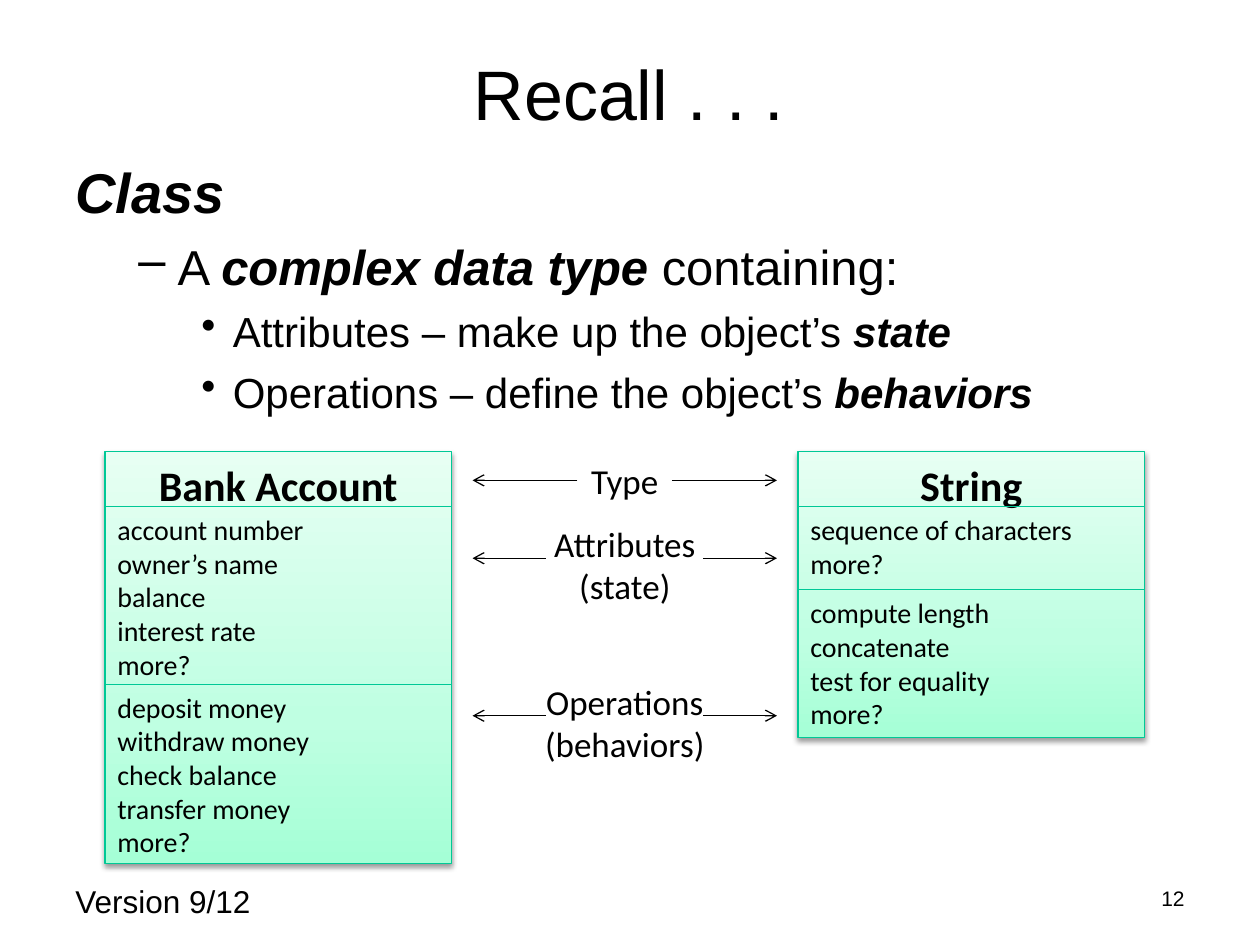
import dataclasses
from typing import NamedTuple, Optional, Sequence

import pptx
import pptx.dml.color
import pptx.enum.shapes
import pptx.enum.text
import pptx.oxml
import pptx.oxml.ns
import pptx.util
from lxml import etree

Pt = pptx.util.Pt
ALIGN = pptx.enum.text.PP_ALIGN
ANCHOR = pptx.enum.text.MSO_ANCHOR
qn = pptx.oxml.ns.qn

COLORS = {
    "text": "000000",
    "outline": "00C896",
    "deep": "A5FFD6",
    "middle": "BFFFE2",
    "pale": "E7FFF3",
}
BOX_TOP, BOX_WIDTH, HEADER_LINE = 258, 198, 289.5
ARROW_LEFT, ARROW_RIGHT = 270, 444
CENTER = (ARROW_LEFT + ARROW_RIGHT) / 2


class Frame(NamedTuple):
    left: float
    top: float
    width: float
    height: float


class Piece(NamedTuple):
    text: str
    strong: bool = False


@dataclasses.dataclass
class Line:
    pieces: Sequence[Piece]
    size: Optional[float] = None
    level: int = 0
    margin: float = 0
    hang: float = 0
    bullet: str = ""
    before: float = 0


@dataclasses.dataclass
class ClassBox:
    name: str
    left: float
    bottom: float
    operations_line: float
    attributes: Sequence[str]
    operations: Sequence[str]


@dataclasses.dataclass
class Label:
    lines: Sequence[str]
    frame: Frame
    arrow_y: float
    half_gap: float


def plain(*texts: str) -> list[Line]:
    return [Line([Piece(text)]) for text in texts]


def rgb(name: str) -> pptx.dml.color.RGBColor:
    return pptx.dml.color.RGBColor.from_string(COLORS[name])


def add_text(page, frame: Frame, lines: Sequence[Line], *, font: str = "Calibri",
             size: float = 16, bold: bool = False, align=ALIGN.LEFT,
             anchor=ANCHOR.TOP, spacing: Optional[float] = None,
             inset: bool = True) -> None:
    box = page.shapes.add_textbox(*map(Pt, frame))
    text_frame = box.text_frame
    text_frame.word_wrap = True
    text_frame.vertical_anchor = anchor
    if not inset:
        text_frame.margin_left = text_frame.margin_right = 0
        text_frame.margin_top = text_frame.margin_bottom = 0
    for index, line in enumerate(lines):
        para = text_frame.add_paragraph() if index else text_frame.paragraphs[0]
        para.alignment = align
        para.level = line.level
        para.space_before = Pt(line.before)
        if spacing:
            para.line_spacing = spacing
        if line.bullet:
            properties = para._p.get_or_add_pPr()
            properties.set("marL", str(Pt(line.margin)))
            properties.set("indent", str(Pt(-line.hang)))
            etree.SubElement(properties, qn("a:buChar")).set("char", line.bullet)
        for piece in line.pieces:
            span = para.add_run()
            span.text = piece.text
            span.font.name = font
            span.font.size = Pt(line.size or size)
            span.font.bold = bold or piece.strong
            span.font.italic = piece.strong
            span.font.color.rgb = rgb("text")


def add_line(page, start: tuple[float, float], end: tuple[float, float],
             color: str, arrow: bool = False) -> None:
    line = page.shapes.add_connector(
        pptx.enum.shapes.MSO_CONNECTOR.STRAIGHT, *map(Pt, (*start, *end)))
    line.line.color.rgb = rgb(color)
    line.line.width = Pt(0.75)
    if arrow:
        etree.SubElement(line.line._get_or_add_ln(), qn("a:tailEnd")).set("type", "arrow")
    etree.SubElement(line._element.spPr, qn("a:effectLst"))


def add_panel(page, frame: Frame) -> None:
    panel = page.shapes.add_shape(
        pptx.enum.shapes.MSO_SHAPE.RECTANGLE, *map(Pt, frame))
    panel.line.color.rgb = rgb("outline")
    panel.line.width = Pt(0.75)
    namespace = pptx.oxml.ns.nsdecls("a")
    stops = "".join(
        f'<a:gs pos="{position * 1000}"><a:srgbClr val="{COLORS[name]}"/></a:gs>'
        for position, name in ((0, "deep"), (35, "middle"), (100, "pale")))
    gradient = pptx.oxml.parse_xml(
        f'<a:gradFill {namespace} rotWithShape="1"><a:gsLst>{stops}</a:gsLst>'
        '<a:lin ang="16200000" scaled="0"/></a:gradFill>')
    properties = panel._element.spPr
    properties.find(qn("a:prstGeom")).addnext(gradient)
    properties.append(pptx.oxml.parse_xml(
        f'<a:effectLst {namespace}><a:outerShdw blurRad="{Pt(3.1)}" dist="{Pt(1.6)}" '
        f'dir="5400000" rotWithShape="0"><a:srgbClr val="{COLORS["text"]}">'
        '<a:alpha val="38000"/></a:srgbClr></a:outerShdw></a:effectLst>'))


def add_class_box(page, item: ClassBox) -> None:
    add_panel(page, Frame(item.left, BOX_TOP, BOX_WIDTH, item.bottom - BOX_TOP))
    add_text(page, Frame(item.left, BOX_TOP + 1.2, BOX_WIDTH, 29), plain(item.name),
             size=24, bold=True, align=ALIGN.CENTER)
    sections = ((HEADER_LINE, item.operations_line, item.attributes),
                (item.operations_line, item.bottom, item.operations))
    for top, bottom, members in sections:
        add_text(page, Frame(item.left, top, BOX_WIDTH, bottom - top), plain(*members))
        add_line(page, (item.left, top), (item.left + BOX_WIDTH, top), "outline")


def add_label(page, label: Label) -> None:
    add_text(page, label.frame, plain(*label.lines), size=20, align=ALIGN.CENTER)
    for side, tip in ((-1, ARROW_LEFT), (1, ARROW_RIGHT)):
        add_line(page, (CENTER + side * label.half_gap, label.arrow_y),
                 (tip, label.arrow_y), "text", arrow=True)


BODY = [
    Line([Piece("Class", True)], size=32),
    Line([Piece("A "), Piece("complex data type", True), Piece(" containing:")],
         size=28, level=1, margin=58.5, hang=22.5, bullet="–", before=6.5),
    *(Line([Piece(text), Piece(key, True)], size=24, level=2, margin=90, hang=18,
           bullet="•", before=6)
      for text, key in (("Attributes – make up the object’s ", "state"),
                        ("Operations – define the object’s ", "behaviors"))),
]
CLASS_BOXES = [
    ClassBox("Bank Account", 60, 493.5, 391,
             ["account number", "owner’s name", "balance", "interest rate", "more?"],
             ["deposit money", "withdraw money", "check balance", "transfer money",
              "more?"]),
    ClassBox("String", 456, 421.5, 337,
             ["sequence of characters", "more?"],
             ["compute length", "concatenate", "test for equality", "more?"]),
]
LABELS = [
    Label(["Type"], Frame(CENTER - 51, 259.2, 102, 32), 274.5, 27),
    Label(["Attributes (state)"], Frame(CENTER - 60, 295.2, 120, 56), 319, 45),
    Label(["Operations", "(behaviors)"], Frame(CENTER - 60, 385.2, 120, 56), 409, 45),
]


def main() -> None:
    deck = pptx.Presentation()
    deck.slide_width, deck.slide_height = Pt(720), Pt(540)
    page = deck.slides.add_slide(deck.slide_layouts[6])

    # Title and definition
    add_text(page, Frame(36, 21.6, 647, 67.7), plain("Recall . . ."), font="Arial",
             size=40, align=ALIGN.CENTER, anchor=ANCHOR.MIDDLE, spacing=0.93, inset=False)
    add_text(page, Frame(36, 86.5, 648, 144), BODY, font="Arial")

    # Class diagrams and the labels between them
    for item in CLASS_BOXES:
        add_class_box(page, item)
    for label in LABELS:
        add_label(page, label)

    # Footer
    add_text(page, Frame(36, 500.4, 168, 28.8), plain("Version 9/12"),
             font="Arial", size=18)
    add_text(page, Frame(516, 500.4, 168, 28.8), plain("12"), font="Arial", size=12,
             align=ALIGN.RIGHT, anchor=ANCHOR.MIDDLE, spacing=0.8)

    deck.save("out.pptx")


if __name__ == "__main__":
    main()
